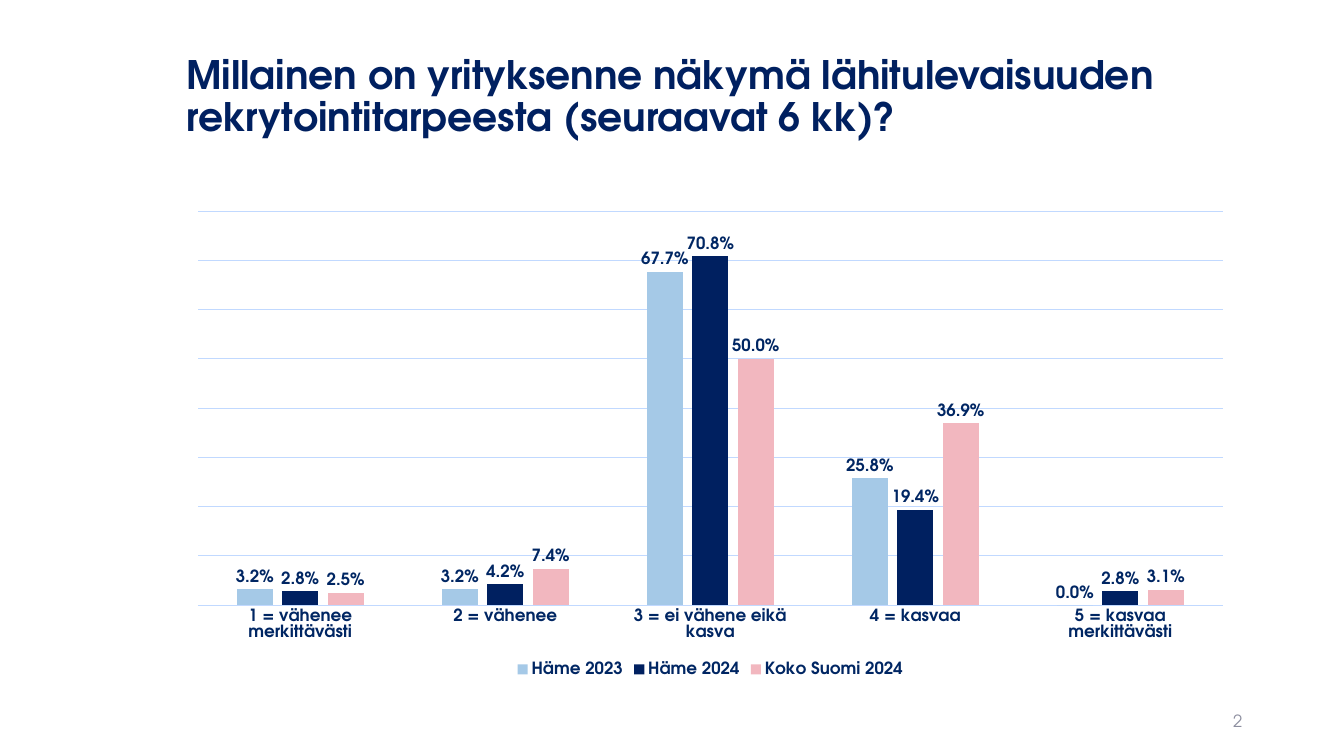
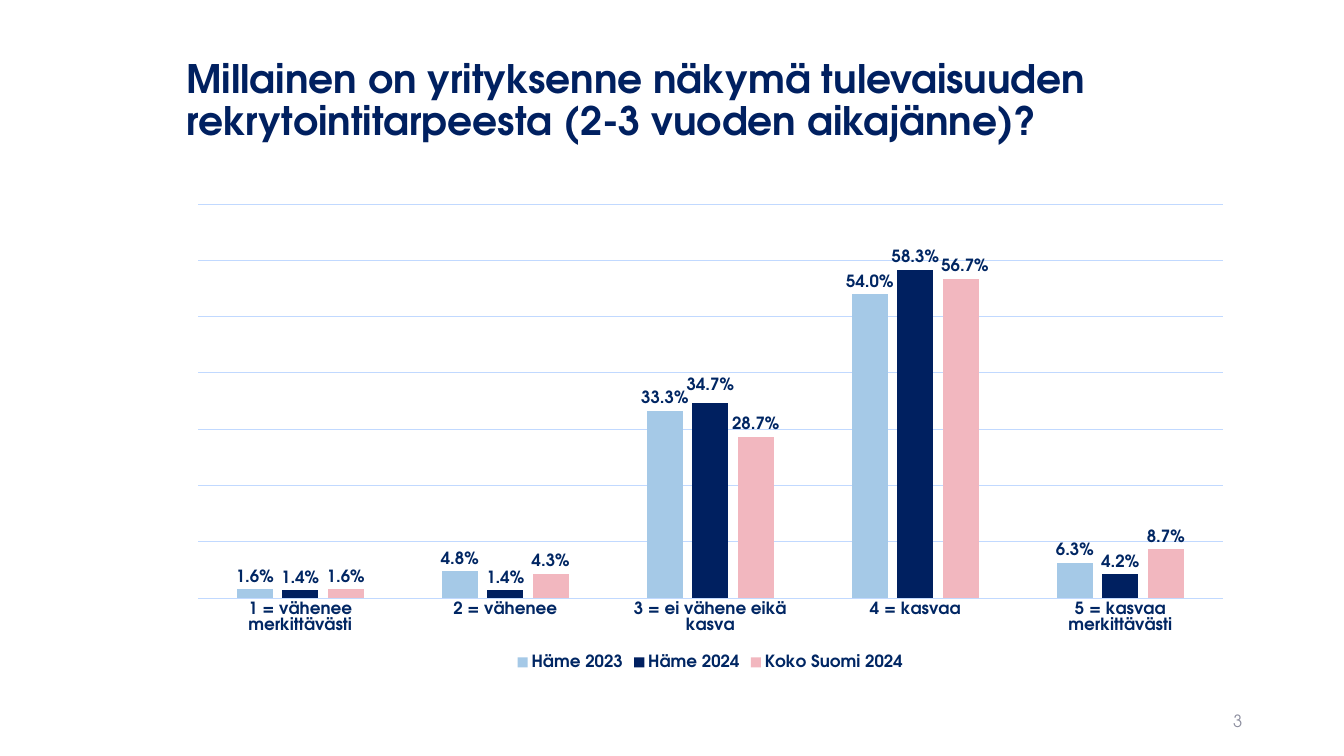
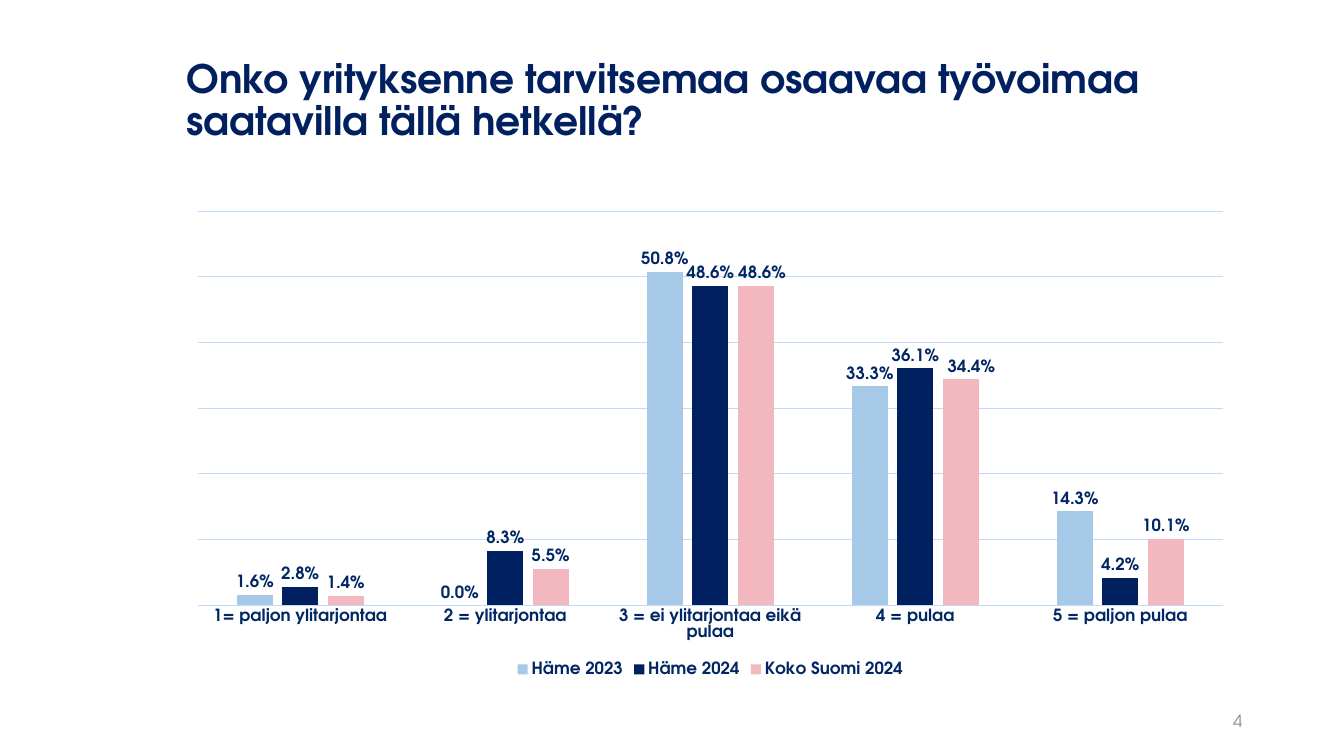
"""Build three survey slides, each with a title, a clustered column chart and a page number."""
from lxml import etree
from pptx import Presentation
from pptx import util as u
from pptx.chart.data import CategoryChartData
from pptx.dml.color import RGBColor
from pptx.enum import chart as charts, text
from pptx.oxml.ns import qn

FONT = "TeX Gyre Adventor"
NAVY, LABEL, GREY, GRID = "002060", "002663", "8C8E9F", "C1D9FF"
TITLE_FONT = {"name": FONT, "size": u.Pt(28), "bold": True}
NUMBER_FONT = {"name": FONT, "size": u.Pt(12), "bold": False}
CHART_FONT = {"name": FONT, "size": u.Pt(12), "bold": True}
PERCENT = "0.0%"
LEFT, WIDTH = 1.75, 10.59
SERIES = [("Häme 2023", "A5C9E7"), ("Häme 2024", NAVY), ("Koko Suomi 2024", "F2B7BF")]
OUTLOOK = ["1 = vähenee merkittävästi", "2 = vähenee", "3 = ei vähene eikä kasva",
           "4 = kasvaa", "5 = kasvaa merkittävästi"]
SUPPLY = ["1= paljon ylitarjontaa", "2 = ylitarjontaa", "3 = ei ylitarjontaa eikä pulaa",
          "4 = pulaa", "5 = paljon pulaa"]
TOP, MIDDLE = text.MSO_ANCHOR.TOP, text.MSO_ANCHOR.MIDDLE

# "nudges" maps (series, category) to a label shift as a share of the chart size.
QUESTIONS = [
    {"title": "Millainen on yrityksenne näkymä lähitulevaisuuden rekrytointitarpeesta (seuraavat 6 kk)?",
     "title_top": 0.5, "anchor": TOP, "chart_top": 2, "maximum": 0.8, "categories": OUTLOOK,
     "values": [(0.032, 0.032, 0.677, 0.258, 0),
                (0.028, 0.042, 0.708, 0.194, 0.028),
                (0.025, 0.074, 0.5, 0.369, 0.031)],
     "nudges": {}},
    {"title": "Millainen on yrityksenne näkymä tulevaisuuden rekrytointitarpeesta (2-3 vuoden aikajänne)?",
     "title_top": 0.36, "anchor": MIDDLE, "chart_top": 1.93, "maximum": 0.7, "categories": OUTLOOK,
     "values": [(0.016, 0.048, 0.333, 0.54, 0.063),
                (0.014, 0.014, 0.347, 0.583, 0.042),
                (0.016, 0.043, 0.287, 0.567, 0.087)],
     "nudges": {(1, 2): (0, -0.01), (2, 3): (0.004, 0)}},
    {"title": "Onko yrityksenne tarvitsemaa osaavaa työvoimaa saatavilla tällä hetkellä?",
     "title_top": 0.36, "anchor": MIDDLE, "chart_top": 2, "maximum": 0.6, "categories": SUPPLY,
     "values": [(0.016, 0, 0.508, 0.333, 0.143),
                (0.028, 0.083, 0.486, 0.361, 0.042),
                (0.014, 0.055, 0.486, 0.344, 0.101)],
     "nudges": {(2, 2): (0.006, 0), (2, 3): (0.01, 0)}},
]


def color(value):
    return RGBColor.from_string(value)


def style_font(font, values, value):
    for name, setting in values.items():
        setattr(font, name, setting)
    font.color.rgb = color(value)


def style_line(line):
    line.color.rgb = color(GRID)
    line.width = u.Pt(0.75)


def add_text(page, place, words, values, value, anchor, **paragraph):
    box = page.shapes.add_textbox(*map(u.Inches, place))
    box.text_frame.word_wrap = True
    box.text_frame.vertical_anchor = anchor
    para = box.text_frame.paragraphs[0]
    for name, setting in paragraph.items():
        setattr(para, name, setting)
    span = para.add_run()
    span.text = words
    style_font(span.font, values, value)


def nudge_label(series, index, shift):
    label = series.points[index].data_label
    style_font(label.font, CHART_FONT, LABEL)
    label.position = charts.XL_LABEL_POSITION.OUTSIDE_END
    element = series.data_labels._element.xpath(f"c:dLbl[c:idx/@val='{index}']")[0]
    layout = etree.Element(qn("c:layout"))
    manual = etree.SubElement(layout, qn("c:manualLayout"))
    for axis, distance in zip("xy", shift):
        etree.SubElement(manual, qn(f"c:{axis}")).set("val", str(distance))
    element.insert(1, layout)


def add_columns(page, question):
    data = CategoryChartData(number_format=PERCENT)
    data.categories = question["categories"]
    for (name, _), values in zip(SERIES, question["values"]):
        data.add_series(name, values)
    place = map(u.Inches, (LEFT, question["chart_top"], WIDTH, 4.76))
    chart = page.shapes.add_chart(charts.XL_CHART_TYPE.COLUMN_CLUSTERED, *place, data).chart
    chart.has_title = False
    chart.has_legend = True
    chart.legend.position = charts.XL_LEGEND_POSITION.BOTTOM
    chart.legend.include_in_layout = False

    across, up = chart.category_axis, chart.value_axis
    across.major_tick_mark = charts.XL_TICK_MARK.NONE
    style_line(across.format.line)
    up.visible = False
    up.minimum_scale, up.maximum_scale, up.major_unit = 0, question["maximum"], 0.1
    up.has_major_gridlines = True
    style_line(up.major_gridlines.format.line)
    for font in (chart.font, chart.legend.font, across.tick_labels.font):
        style_font(font, CHART_FONT, LABEL)

    plot = chart.plots[0]
    plot.gap_width, plot.overlap, plot.vary_by_categories = 219, -27, False
    for series, (_, fill) in zip(plot.series, SERIES):
        series.format.fill.solid()
        series.format.fill.fore_color.rgb = color(fill)
        series.invert_if_negative = False
        labels = series.data_labels
        labels.show_value = True
        labels.number_format, labels.number_format_is_linked = PERCENT, False
        labels.position = charts.XL_LABEL_POSITION.OUTSIDE_END
        style_font(labels.font, CHART_FONT, LABEL)
    for (row, index), shift in question["nudges"].items():
        nudge_label(plot.series[row], index, shift)


def main():
    deck = Presentation()
    deck.slide_width, deck.slide_height = u.Inches(13.33), u.Inches(7.5)
    for number, question in enumerate(QUESTIONS, start=2):
        page = deck.slides.add_slide(deck.slide_layouts[6])
        add_text(page, (LEFT, question["title_top"], WIDTH, 1.3), question["title"],
                 TITLE_FONT, NAVY, question["anchor"], line_spacing=0.9)
        add_text(page, (9.42, 6.95, 3, 0.4), str(number), NUMBER_FONT, GREY, MIDDLE,
                 alignment=text.PP_ALIGN.RIGHT)
        add_columns(page, question)
    deck.save("out.pptx")


if __name__ == "__main__":
    main()
